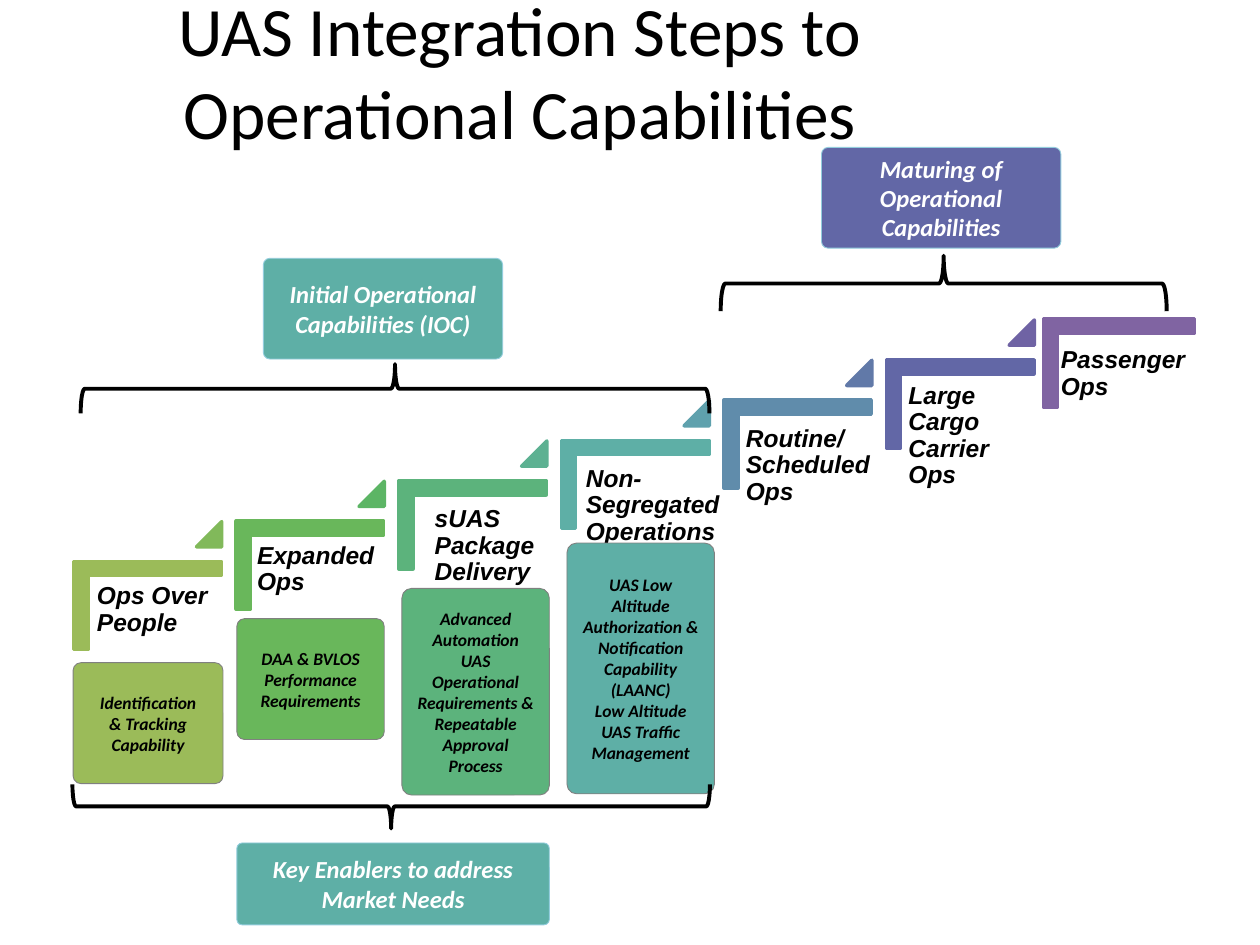
import pptx
import pptx.util
import pptx.dml.color
import pptx.enum.shapes
import pptx.enum.text

Inches, Pt = pptx.util.Inches, pptx.util.Pt
RGBColor = pptx.dml.color.RGBColor
MSO = pptx.enum.shapes.MSO_SHAPE
ALIGN = pptx.enum.text.PP_ALIGN
ANCHOR = pptx.enum.text.MSO_ANCHOR

BLACK = RGBColor(0x00, 0x00, 0x00)
WHITE = RGBColor(0xFF, 0xFF, 0xFF)
GRAY = RGBColor(0x80, 0x80, 0x80)
PALE_BLUE = RGBColor(0x93, 0xCD, 0xDD)
OLIVE = RGBColor(0x9B, 0xBB, 0x59)
GREEN = RGBColor(0x69, 0xB7, 0x5B)
SEA_GREEN = RGBColor(0x5C, 0xB3, 0x7C)
TEAL = RGBColor(0x5E, 0xAF, 0xA6)
STEEL = RGBColor(0x60, 0x8C, 0xAB)
INDIGO = RGBColor(0x62, 0x67, 0xA6)
PURPLE = RGBColor(0x80, 0x64, 0xA2)

TITLE = "UAS Integration Steps to Operational Capabilities"

# step colour, label runs (text, size), label box
STEPS = [
    (OLIVE, [("Ops Over People", 14)], (0.71, 4.57, 1.05, 0.92)),
    (GREEN, [("Expanded", 14), (" ", 11), ("Ops", 14)], (1.98, 4.25, 1.25, 0.92)),
    (SEA_GREEN, [("sUAS Package Delivery", 14)], (3.39, 3.96, 1.05, 0.92)),
    (TEAL, [("Non-Segregated Operations", 14)], (4.59, 3.64, 1.37, 0.92)),
    (STEEL, [("Routine/ Scheduled Ops", 14)], (5.86, 3.32, 1.26, 0.92)),
    (INDIGO, [("Large Cargo Carrier Ops", 14)], (7.15, 2.98, 1.05, 0.92)),
    (PURPLE, [("Passenger Ops", 14)], (8.36, 2.7, 1.25, 0.92)),
]
# triangles between one step and the next
RISERS = [RGBColor(0x81, 0xB9, 0x5A), RGBColor(0x5C, 0xB5, 0x65),
          RGBColor(0x5D, 0xB1, 0x92), RGBColor(0x5F, 0xA1, 0xAD),
          RGBColor(0x61, 0x79, 0xA8), RGBColor(0x6F, 0x63, 0xA4)]
STEP_DX, STEP_DY = 1.29, -0.32

ENABLERS = [
    (OLIVE, (0.58, 5.26, 1.19, 0.96),
     ["Identification", "& Tracking", "Capability"]),
    (TEAL, (4.5, 4.31, 1.17, 1.99),
     ["UAS Low Altitude Authorization & Notification Capability (LAANC)",
      "Low Altitude UAS Traffic Management"]),
    (GREEN, (1.88, 4.91, 1.17, 0.96),
     ["DAA & BVLOS", "Performance Requirements"]),
    (SEA_GREEN, (3.19, 4.67, 1.17, 1.64),
     ["Advanced Automation UAS Operational",
      "Requirements & Repeatable Approval Process"]),
]
HEADINGS = [
    (TEAL, (2.09, 2.05, 1.9, 0.8), ["Initial Operational Capabilities (IOC)"]),
    (TEAL, (1.88, 6.69, 2.48, 0.65), ["Key Enablers to address Market Needs"]),
    (INDIGO, (6.52, 1.17, 1.9, 0.8), ["Maturing of Operational Capabilities"]),
]
# box before rotation, whether the tip points down
BRACES = [
    ((2.94, 0.59, 0.39, 4.99), False),
    ((2.93, 3.87, 0.35, 5.06), True),
    ((7.27, 0.48, 0.44, 3.54), False),
]


def add_run(p, text, size, font, color, emphasis=True):
    r = p.add_run()
    r.text = text
    r.font.name, r.font.size = font, Pt(size)
    r.font.color.rgb = color
    r.font.bold = r.font.italic = emphasis


def add_shape(s, kind, box, fill, line, width, adjustments=(), rotation=0):
    sp = s.shapes.add_shape(kind, *map(Inches, box))
    sp.shadow.inherit = False
    sp.rotation = rotation
    for i, value in enumerate(adjustments):
        sp.adjustments[i] = value
    if fill is None:
        sp.fill.background()
    else:
        sp.fill.solid()
        sp.fill.fore_color.rgb = fill
    sp.line.color.rgb = line
    sp.line.width = Pt(width)
    return sp


def add_text_box(s, box, margin=None):
    tf = s.shapes.add_textbox(*map(Inches, box)).text_frame
    tf.word_wrap = True
    if margin is not None:
        tf.margin_left = tf.margin_right = Inches(margin)
        tf.margin_top = tf.margin_bottom = Inches(margin)
    return tf


def add_card(s, fill, box, lines, line, size, color):
    sp = add_shape(s, MSO.ROUNDED_RECTANGLE, box, fill, line, 0.5, [0.065])
    tf = sp.text_frame
    tf.word_wrap = True
    tf.vertical_anchor = ANCHOR.MIDDLE
    for i, text in enumerate(lines):
        p = tf.add_paragraph() if i else tf.paragraphs[0]
        p.alignment = ALIGN.CENTER
        add_run(p, text, size, "Calibri", color)


def add_staircase(s):
    last = len(STEPS) - 1
    for i, (color, label, label_box) in enumerate(STEPS):
        x, y = i * STEP_DX, i * STEP_DY
        # the top step is a little longer and set closer
        box = (8.53, 2.28, 0.7, 1.2) if i == last else (0.82 + x, 4.22 + y, 0.7, 1.17)
        add_shape(s, MSO.CORNER, box, color, color, 2, [0.161, 0.161], 90)
        p = add_text_box(s, label_box, 0.06).paragraphs[0]
        p.line_spacing = 0.9
        for text, size in label:
            add_run(p, text, size, "Arial", BLACK)
        if i < last:
            add_shape(s, MSO.ISOSCELES_TRIANGLE, (1.56 + x, 4.14 + y, 0.2, 0.2),
                      RISERS[i], RISERS[i], 2, [1])


def main():
    prs = pptx.Presentation()
    prs.slide_width, prs.slide_height = Inches(10), Inches(7.5)
    s = prs.slides.add_slide(prs.slide_layouts[6])

    tf = add_text_box(s, (0, 0.25, 8.25, 0.61))
    tf.vertical_anchor = ANCHOR.MIDDLE
    tf.paragraphs[0].alignment = ALIGN.CENTER
    add_run(tf.paragraphs[0], TITLE, 39.6, "Calibri", BLACK, emphasis=False)

    add_staircase(s)
    for fill, box, lines in ENABLERS:
        add_card(s, fill, box, lines, GRAY, 10, BLACK)
    for fill, box, lines in HEADINGS:
        add_card(s, fill, box, lines, PALE_BLUE, 14, WHITE)
    for box, points_down in BRACES:
        sp = add_shape(s, MSO.RIGHT_BRACE, box, None, BLACK, 2.25, rotation=270)
        if points_down:
            sp.element.spPr.xfrm.set("flipH", "1")

    prs.save("out.pptx")


if __name__ == "__main__":
    main()
